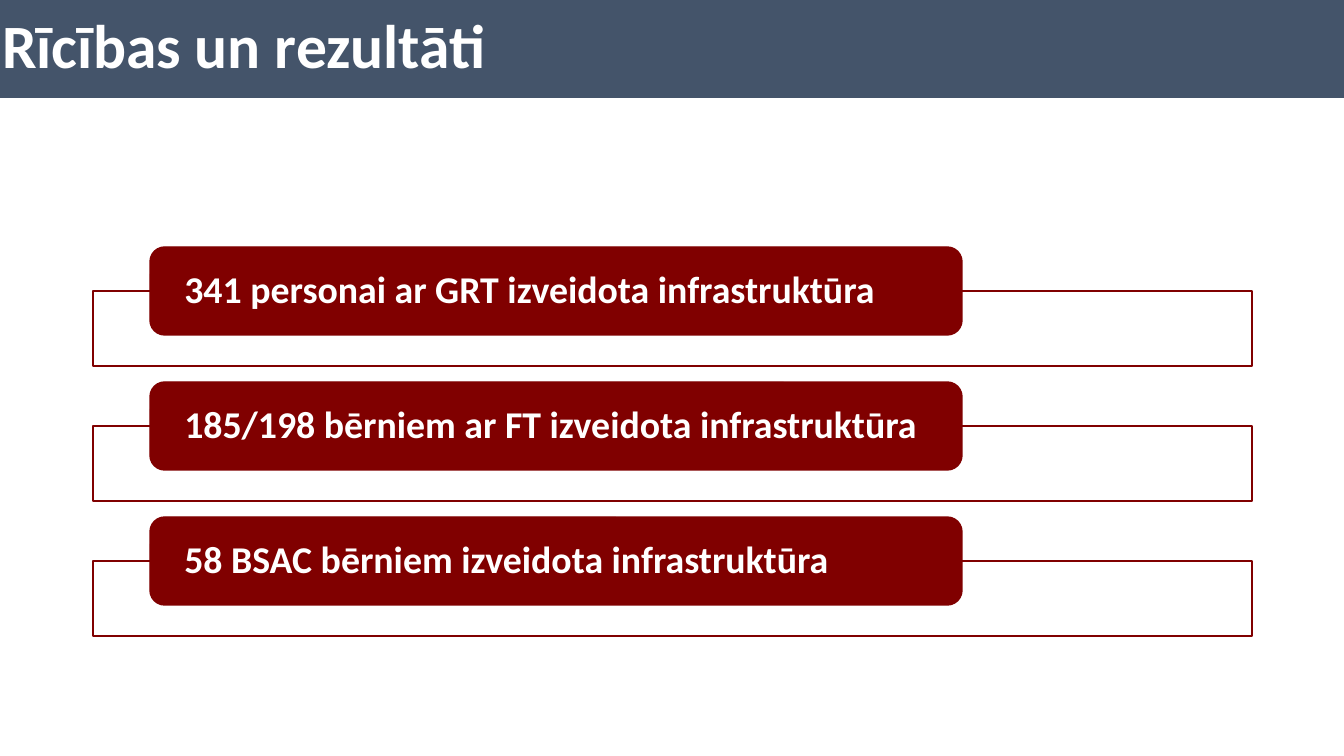
from pptx import Presentation
from pptx.dml.color import RGBColor
from pptx.enum.shapes import MSO_SHAPE as Shape
from pptx.enum.text import MSO_ANCHOR as Anchor, PP_ALIGN as Align
from pptx.util import Pt

TITLE = "Rīcības un rezultāti"
RESULTS = [
    "341 personai ar GRT izveidota infrastruktūra",
    "185/198 bērniem ar FT izveidota infrastruktūra",
    "58 BSAC bērniem izveidota infrastruktūra",
]
WHITE, SLATE, MAROON = "FFFFFF", "44546A", "800000"
WIDE, HIGH = 1344, 756
TOP, STEP = 247, 135
PILL_X, PILL_W, PILL_H = 150, 812, 88
BOX_X, BOX_W, BOX_H = 93, 1159, 75
INSET = 30


def px(num):
    return round(num * 12192000 / WIDE)


def color(code):
    return RGBColor.from_string(code)


def paint(item, code):
    item.fill.solid()
    item.fill.fore_color.rgb = color(code)


def write(item, text, size):
    frame = item.text_frame
    frame.text = text
    frame.word_wrap = True
    frame.vertical_anchor = Anchor.MIDDLE
    para = frame.paragraphs[0]
    para.alignment = Align.LEFT
    para.line_spacing = 0.9
    font = para.font
    font.name, font.size, font.bold = "Calibri", Pt(size), True
    font.color.rgb = color(WHITE)
    return frame


def draw(slide, kind, fill, *rect):
    item = slide.shapes.add_shape(kind, *map(px, rect))
    item.shadow.inherit = False
    paint(item, fill)
    item.line.color.rgb = color(MAROON)
    item.line.width = Pt(1)
    return item


def main():
    """Build the slide with a title bar and one framed label per result."""
    deck = Presentation()
    deck.slide_width, deck.slide_height = px(WIDE), px(HIGH)
    slide = deck.slides.add_slide(deck.slide_layouts[5])
    title = slide.shapes.title
    title.left, title.top, title.width, title.height = map(px, (-8, 0, 1353, 98))
    paint(title, SLATE)
    write(title, TITLE, 44)

    for row, text in enumerate(RESULTS):
        top = TOP + row * STEP
        draw(slide, Shape.RECTANGLE, WHITE, BOX_X, top + PILL_H / 2, BOX_W, BOX_H)
        pill = draw(slide, Shape.ROUNDED_RECTANGLE, MAROON, PILL_X, top, PILL_W, PILL_H)
        frame = write(pill, text, 27)
        frame.margin_left = frame.margin_right = px(INSET)
        frame.margin_top = frame.margin_bottom = 0

    deck.save("out.pptx")


if __name__ == "__main__":
    main()
